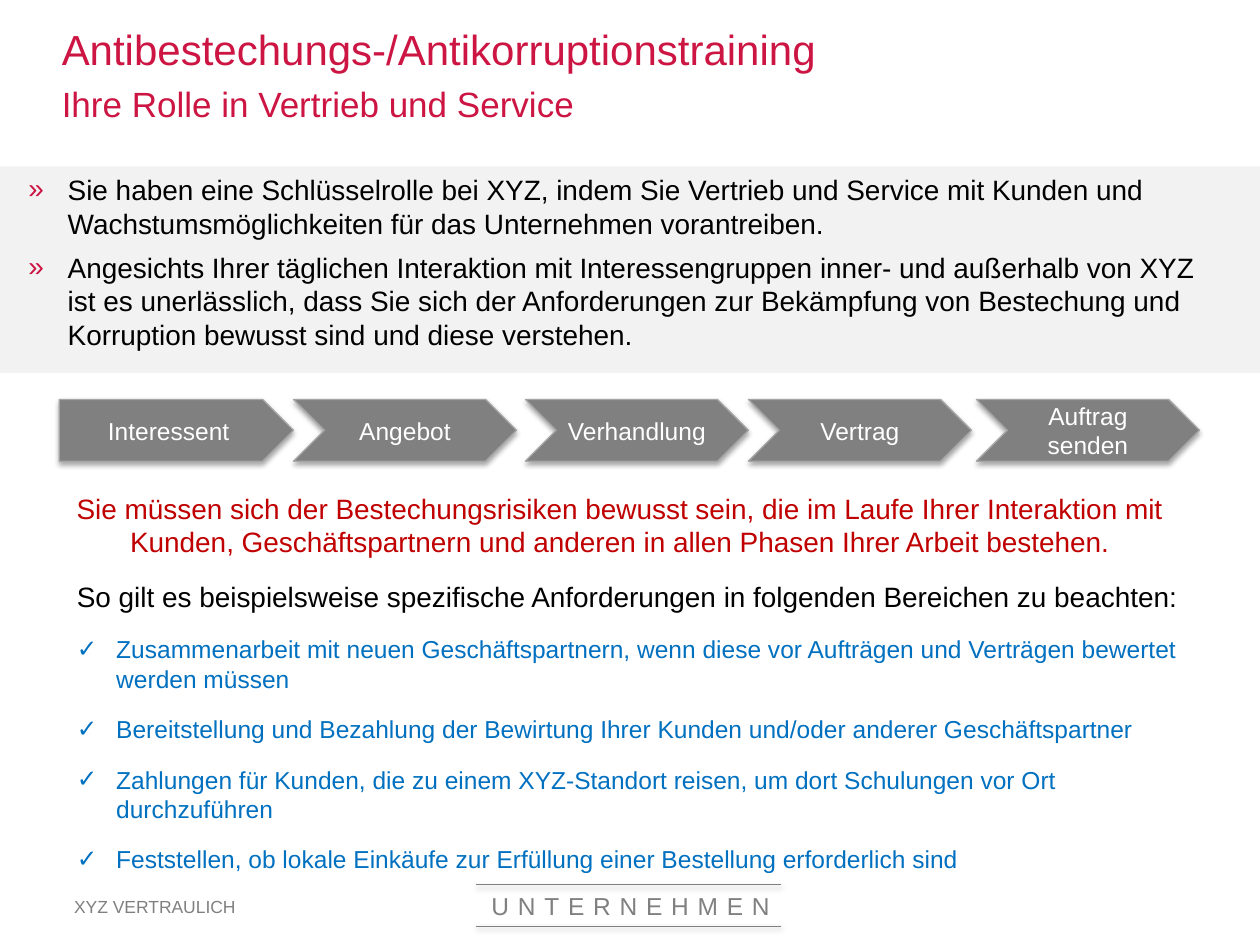
import pptx
import pptx.util
import pptx.oxml
import pptx.oxml.ns
import pptx.dml.color
import pptx.enum.shapes
import pptx.enum.text
import lxml.etree

Pt = pptx.util.Pt
SHAPE = pptx.enum.shapes.MSO_SHAPE
ALIGN = pptx.enum.text.PP_ALIGN
ANCHOR = pptx.enum.text.MSO_ANCHOR

TITLE = "Antibestechungs-/Antikorruptionstraining"
SUBTITLE = "Ihre Rolle in Vertrieb und Service"
ROLE = [
    "Sie haben eine Schlüsselrolle bei XYZ, indem Sie Vertrieb und Service mit Kunden und "
    "Wachstumsmöglichkeiten für das Unternehmen vorantreiben.",
    "Angesichts Ihrer täglichen Interaktion mit Interessengruppen inner- und außerhalb von XYZ\n"
    "ist es unerlässlich, dass Sie sich der Anforderungen zur Bekämpfung von Bestechung und "
    "Korruption bewusst sind und diese verstehen.",
]
PHASES = [
    ("Interessent", 33.84, 133.92),
    ("Angebot", 167.76, 127.44),
    ("Verhandlung", 300.24, 127.44),
    ("Vertrag", 427.68, 127.44),
    ("Auftrag senden", 558, 127.44),
]
WARNING = (
    "Sie müssen sich der Bestechungsrisiken bewusst sein, die im Laufe Ihrer Interaktion mit "
    "Kunden, Geschäftspartnern und anderen in allen Phasen Ihrer Arbeit bestehen."
)
AREAS_INTRO = "So gilt es beispielsweise spezifische Anforderungen in folgenden Bereichen zu beachten:"
AREAS = [
    "Zusammenarbeit mit neuen Geschäftspartnern, wenn diese vor Aufträgen und Verträgen bewertet "
    "werden müssen",
    "Bereitstellung und Bezahlung der Bewirtung Ihrer Kunden und/oder anderer Geschäftspartner",
    "Zahlungen für Kunden, die zu einem XYZ-Standort reisen, um dort Schulungen vor Ort "
    "durchzuführen",
    "Feststellen, ob lokale Einkäufe zur Erfüllung einer Bestellung erforderlich sind",
]
CONFIDENTIAL = "XYZ VERTRAULICH"
COMPANY = "UNTERNEHMEN"

THEME = dict(
    font="Arial",
    accent="CC1543", warning="C00000", area="0070C0", text="000000", white="FFFFFF",
    gray="808080", band="F2F2F2", outline="A5A5A5",
    title=24, subtitle=20, body=16, small=14, footer=10,
)


def rgb(name):
    return pptx.dml.color.RGBColor.from_string(THEME[name])


def place(sp, x, y, w, h):
    sp.left, sp.top, sp.width, sp.height = Pt(x), Pt(y), Pt(w), Pt(h)


def setup(sp, anchor=ANCHOR.TOP):
    tf = sp.text_frame
    tf.word_wrap = True
    tf.auto_size = pptx.enum.text.MSO_AUTO_SIZE.NONE
    tf.vertical_anchor = anchor
    return tf


def add_bullet(p, char, color, indent, hanging):
    pPr = p._p.get_or_add_pPr()
    pPr.set("marL", str(Pt(indent)))
    pPr.set("indent", str(-Pt(hanging)))
    if not char:
        pptx.oxml.ns.qn("a:buNone")
        lxml.etree.SubElement(pPr, pptx.oxml.ns.qn("a:buNone"))
        return
    clr = lxml.etree.SubElement(pPr, pptx.oxml.ns.qn("a:buClr"))
    lxml.etree.SubElement(clr, pptx.oxml.ns.qn("a:srgbClr"), val=THEME[color])
    lxml.etree.SubElement(pPr, pptx.oxml.ns.qn("a:buFont"), typeface=THEME["font"])
    lxml.etree.SubElement(pPr, pptx.oxml.ns.qn("a:buChar"), char=char)


def add_text(tf, text, size, color, align=ALIGN.LEFT, before=0, after=0,
             bullet=None, bullet_color=None, indent=0, hanging=0):
    first = not tf.paragraphs[0].runs
    p = tf.paragraphs[0] if first else tf.add_paragraph()
    add_bullet(p, bullet, bullet_color or color, indent, hanging)
    p.alignment = align
    p.line_spacing = 1.0
    p.space_before = Pt(0 if first else before)
    p.space_after = Pt(after)
    for i, line in enumerate(text.split("\n")):
        if i:
            p.add_line_break()
        r = p.add_run()
        r.text = line
        r.font.name = THEME["font"]
        r.font.size = Pt(THEME[size])
        r.font.bold = False
        r.font.color.rgb = rgb(color)
    return p


def add_shadow(sp, alpha, dist):
    sp._element.spPr.append(pptx.oxml.parse_xml(
        f'<a:effectLst {pptx.oxml.ns.nsdecls("a")}>'
        f'<a:outerShdw blurRad="{Pt(3.1)}" dist="{Pt(dist)}" dir="5400000" rotWithShape="0">'
        f'<a:srgbClr val="000000"><a:alpha val="{alpha * 1000}"/></a:srgbClr>'
        '</a:outerShdw></a:effectLst>'))


prs = pptx.Presentation()
prs.slide_width, prs.slide_height = Pt(720), Pt(540)
s = prs.slides.add_slide(prs.slide_layouts[4])
ph = {sp.placeholder_format.idx: sp for sp in s.placeholders}
title, warning, role, unused, areas = (ph[i] for i in range(5))
unused._element.getparent().remove(unused._element)

place(title, 28.08, 29.52, 652.32, 25.92)
tf = setup(title, ANCHOR.MIDDLE)
add_text(tf, TITLE, "title", "accent")
add_text(tf, SUBTITLE, "subtitle", "accent", before=5)

place(role, 0, 95.04, 720, 118.08)
role.fill.solid()
role.fill.fore_color.rgb = rgb("band")
tf = setup(role)
for text in ROLE:
    add_text(tf, text, "body", "text", before=3, after=3,
             bullet="»", bullet_color="accent", indent=31.5, hanging=22.5)

for i, (label, x, w) in enumerate(PHASES):
    kind = SHAPE.CHEVRON if i else SHAPE.PENTAGON
    sp = s.shapes.add_shape(kind, Pt(x), Pt(228.24), Pt(w), Pt(35.28))
    sp.fill.solid()
    sp.fill.fore_color.rgb = rgb("gray")
    sp.line.color.rgb = rgb("outline")
    sp.line.width = Pt(0.75)
    add_shadow(sp, 35, 1.8)
    tf = setup(sp, ANCHOR.MIDDLE)
    if label == "Verhandlung":
        tf.margin_left = tf.margin_right = 0
    add_text(tf, label, "small", "white", ALIGN.CENTER)

place(warning, 30.96, 277.2, 646.56, 45.36)
add_text(setup(warning), WARNING, "body", "warning", ALIGN.CENTER, after=6)

place(areas, 36.72, 327.6, 646.56, 177.12)
tf = setup(areas)
add_text(tf, AREAS_INTRO, "body", "text", after=6)
for text in AREAS:
    add_text(tf, text, "small", "area", before=6, after=6, bullet="✓", indent=22.5, hanging=22.5)

sp = s.shapes.add_textbox(Pt(35.28), Pt(508.32), Pt(117.36), Pt(19.44))
add_text(setup(sp, ANCHOR.MIDDLE), CONFIDENTIAL, "footer", "gray")

sp = s.shapes.add_textbox(Pt(261.36), Pt(505.44), Pt(198), Pt(34))
p = add_text(setup(sp), COMPANY, "small", "gray", ALIGN.CENTER)
p.runs[0].font._element.set("spc", "500")
for y in (505.44, 529.2):
    line = s.shapes.add_connector(
        pptx.enum.shapes.MSO_CONNECTOR.STRAIGHT, Pt(272.16), Pt(y), Pt(446.4), Pt(y))
    line.line.color.rgb = rgb("gray")
    line.line.width = Pt(0.5)
    add_shadow(line, 38, 1.6)

prs.save("out.pptx")
